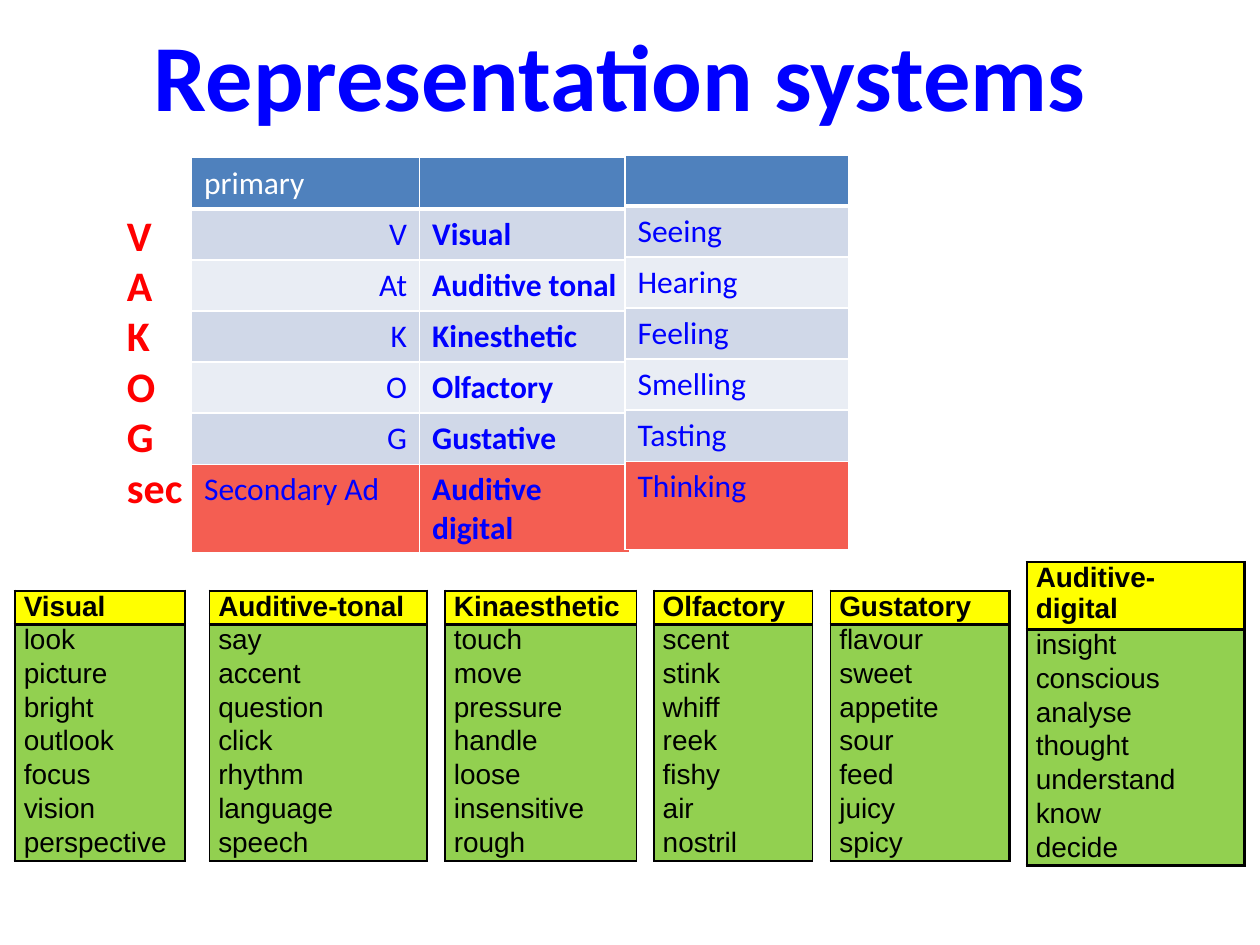
from lxml.etree import SubElement
from pptx import Presentation
from pptx.dml.color import RGBColor
from pptx.enum.text import MSO_ANCHOR as Anchor, PP_ALIGN as Align
from pptx.oxml.ns import qn
from pptx.util import Cm, Pt

BLUE, RED, BLACK, WHITE = "0000FF", "FF0000", "000000", "FFFFFF"
HEADER, BANDS, SECONDARY = "4F81BD", ("D0D8E8", "E9EDF4"), "F45E52"
YELLOW, GREEN = "FFFF00", "92D050"

SYSTEMS = [
    ("primary", "", ""),
    ("V", "Visual", "Seeing"),
    ("At", "Auditive tonal", "Hearing"),
    ("K", "Kinesthetic", "Feeling"),
    ("O", "Olfactory", "Smelling"),
    ("G", "Gustative", "Tasting"),
    ("Secondary Ad", "Auditive digital", "Thinking"),
]

# left, top, width, header height, left and right border, words
WORD_LISTS = [
    (0.3, 11.91, 3.43, 0.68, 1.5, 1,
     "Visual look picture bright outlook focus vision perspective"),
    (4.22, 11.91, 4.39, 0.68, 1, 1,
     "Auditive-tonal say accent question click rhythm language speech"),
    (8.97, 11.91, 3.86, 0.68, 1, 1,
     "Kinaesthetic touch move pressure handle loose insensitive rough"),
    (13.18, 11.91, 3.2, 0.68, 1, 1,
     "Olfactory scent stink whiff reek fishy air nostril"),
    (16.74, 11.91, 3.61, 0.68, 1, 1.5,
     "Gustatory flavour sweet appetite sour feed juicy spicy"),
    (20.7, 11.33, 4.39, 1.36, 1.5, 1.5,
     "Auditive-digital insight conscious analyse thought understand know decide"),
]


def color(value):
    return RGBColor.from_string(value)


def write(para, text, font="Calibri", size=18, fill=BLUE, bold=False, align=Align.LEFT):
    para.alignment = align
    span = para.add_run()
    span.text = text
    span.font.name = font
    span.font.size = Pt(size)
    span.font.bold = bold
    span.font.color.rgb = color(fill)


def set_borders(cell, fill, **widths):
    """Draw the L, R, T and B borders in points; a side of zero gets no line."""
    props = cell._tc.get_or_add_tcPr()
    for side in "LRTB":
        width = widths.get(side, 0)
        line = SubElement(props, qn(f"a:ln{side}"), w=str(Pt(width)))
        if width:
            solid = SubElement(line, qn("a:solidFill"))
            SubElement(solid, qn("a:srgbClr"), val=fill)
        else:
            SubElement(line, qn("a:noFill"))


class SlideBuilder:
    def __init__(self, deck):
        self.slide = deck.slides.add_slide(deck.slide_layouts[6])

    def text(self, left, top, width, height, lines, wrap=True, anchor=Anchor.TOP, **style):
        box = self.slide.shapes.add_textbox(Cm(left), Cm(top), Cm(width), Cm(height))
        frame = box.text_frame
        frame.word_wrap = wrap
        frame.vertical_anchor = anchor
        for index, line in enumerate(lines):
            para = frame.add_paragraph() if index else frame.paragraphs[0]
            write(para, line, **style)

    def table(self, left, top, widths, heights):
        frame = self.slide.shapes.add_table(
            len(heights), len(widths), Cm(left), Cm(top), Cm(sum(widths)), Cm(sum(heights)))
        table = frame.table
        for column, width in zip(table.columns, widths):
            column.width = Cm(width)
        for row, height in zip(table.rows, heights):
            row.height = Cm(height)
        return table

    def systems_table(self, left, top, widths, rows):
        last = len(rows) - 1
        table = self.table(left, top, widths, [1.03] * last + [1.78])
        fills = [HEADER] + [BANDS[i % 2] for i in range(last - 1)] + [SECONDARY]
        for r, row in enumerate(rows):
            for c, text in enumerate(row):
                cell = table.cell(r, c)
                set_borders(cell, WHITE, L=1, R=1, T=3 if r == 1 else 1, B=1 if r else 3)
                cell.fill.solid()
                cell.fill.fore_color.rgb = color(fills[r])
                is_code = len(row) > 1 and c == 0 and 0 < r < last
                if text:
                    write(cell.text_frame.paragraphs[0], text,
                          fill=BLUE if r else WHITE, bold=c == 1,
                          align=Align.RIGHT if is_code else Align.LEFT)

    def word_table(self, left, top, width, header, left_line, right_line, words):
        last = len(words) - 1
        table = self.table(left, top, [width], [header] + [0.68] * last)
        for r, word in enumerate(words):
            cell = table.cell(r, 0)
            set_borders(cell, BLACK, L=left_line, R=right_line,
                        T=1.5 if r < 2 else 0, B=1.5 if r in (0, last) else 0)
            cell.fill.solid()
            cell.fill.fore_color.rgb = color(GREEN if r else YELLOW)
            cell.margin_left = cell.margin_right = Cm(0.18)
            cell.margin_top = cell.margin_bottom = 0
            write(cell.text_frame.paragraphs[0], word, font="Arial", size=16,
                  fill=BLACK, bold=r == 0)


def main():
    deck = Presentation()
    deck.slide_width, deck.slide_height = Cm(25.4), Cm(19.05)
    page = SlideBuilder(deck)
    page.text(2.54, 0.2, 19.91, 2.57, ["Representation systems"], wrap=False,
              anchor=Anchor.MIDDLE, size=54, bold=True, align=Align.CENTER)
    page.systems_table(3.86, 3.18, [4.6, 4.24], [row[:2] for row in SYSTEMS])
    page.systems_table(12.6, 3.12, [4.5], [row[2:] for row in SYSTEMS])
    for *layout, words in WORD_LISTS:
        page.word_table(*layout, words.split())
    page.text(2.31, 4.09, 1.8, 6.4, [*"VAKOG", "sec"], size=24, fill=RED, bold=True)
    deck.save("out.pptx")


if __name__ == "__main__":
    main()
